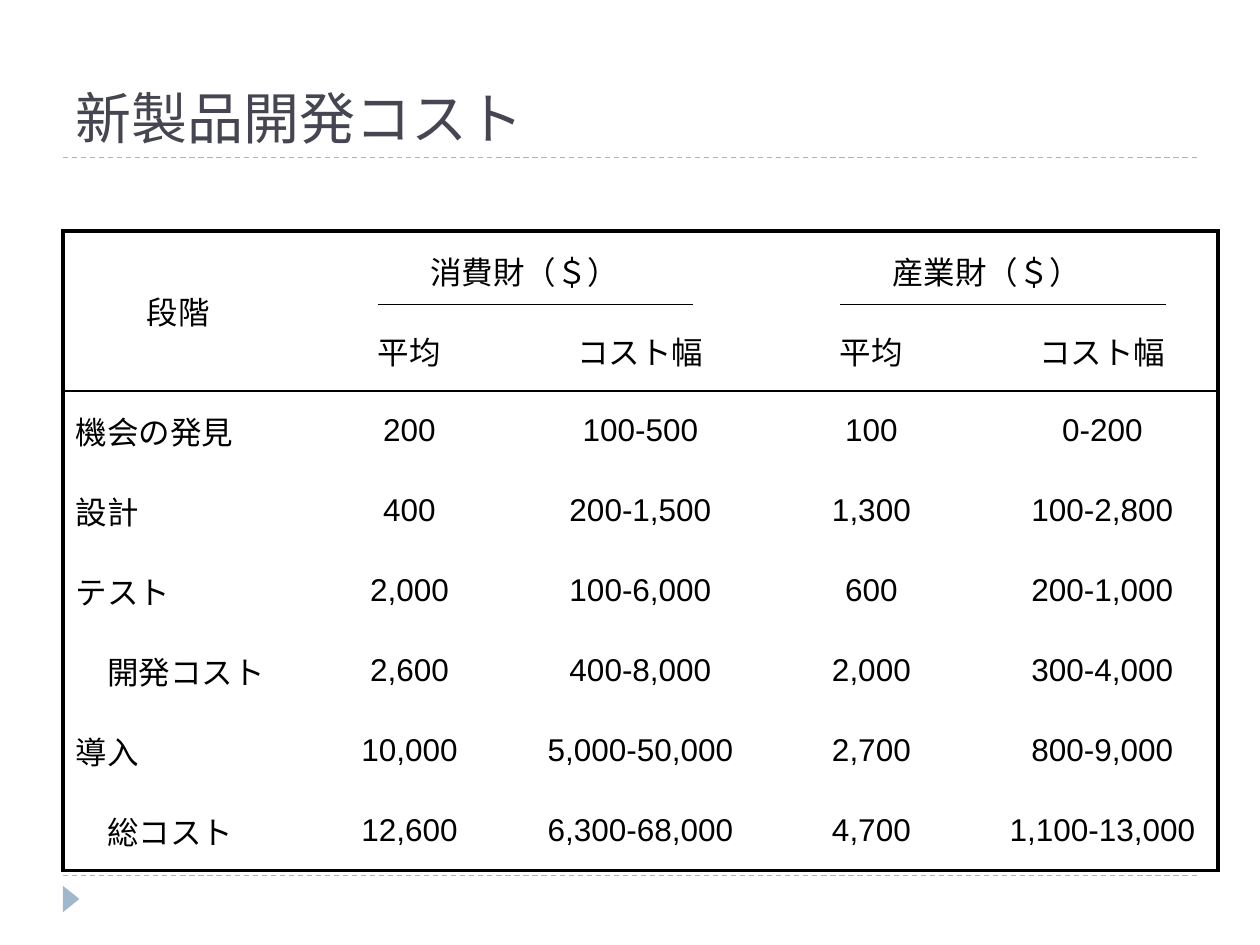
from lxml.etree import SubElement
from pptx import Presentation
from pptx.dml.color import RGBColor
from pptx.enum.dml import MSO_LINE_DASH_STYLE as Dash
from pptx.enum.shapes import MSO_CONNECTOR as Connector, MSO_SHAPE as Shape
from pptx.enum.text import MSO_ANCHOR as Anchor, PP_ALIGN as Align
from pptx.oxml.ns import qn
from pptx.util import Pt

COLORS = {"title": "464653", "accent": "9FB8CD", "ink": "000000"}
THICK, THIN = 2.25, 1

COLUMN_WIDTH, ROW_HEIGHT = 132, 45.7
CELL_MARGIN, INDENT = 7.2, 18
HEADERS = [
    ["段階", "消費財（＄）", "", "産業財（＄）", ""],
    ["", "平均", "コスト幅", "平均", "コスト幅"],
]
STAGES = [
    ["機会の発見", "200", "100-500", "100", "0-200"],
    ["設計", "400", "200-1,500", "1,300", "100-2,800"],
    ["テスト", "2,000", "100-6,000", "600", "200-1,000"],
    ["開発コスト", "2,600", "400-8,000", "2,000", "300-4,000"],
    ["導入", "10,000", "5,000-50,000", "2,700", "800-9,000"],
    ["総コスト", "12,600", "6,300-68,000", "4,700", "1,100-13,000"],
]
SUBTOTALS = {"開発コスト", "総コスト"}
MERGES = [(0, 0, 1, 0), (0, 1, 0, 2), (0, 3, 0, 4)]


class Page:
    def __init__(self, deck):
        self.page = deck.slides.add_slide(deck.slide_layouts[5])
        self.shapes = self.page.shapes

    def color(self, name):
        return RGBColor.from_string(COLORS[name])

    def add_span(self, para, text, size, font, color):
        span = para.add_run()
        span.text = text
        span.font.size = Pt(size)
        span.font.name = font
        span.font.color.rgb = self.color(color)

    def title(self, text, left, top, width, height):
        box = self.shapes.title
        box.left, box.top, box.width, box.height = map(Pt, (left, top, width, height))
        box.text_frame.vertical_anchor = Anchor.BOTTOM
        para = box.text_frame.paragraphs[0]
        para.alignment = Align.LEFT
        self.add_span(para, text, 32, "Roboto Slab", "title")

    def rule(self, left, right, y, color, dash=None):
        line = self.shapes.add_connector(Connector.STRAIGHT, Pt(left), Pt(y), Pt(right), Pt(y))
        line.line.color.rgb = self.color(color)
        line.line.width = Pt(0.75)
        if dash:
            line.line.dash_style = dash
        SubElement(line._element.spPr, qn("a:effectLst"))

    def marker(self, left, top, width, height):
        triangle = self.shapes.add_shape(
            Shape.ISOSCELES_TRIANGLE, Pt(left), Pt(top), Pt(width), Pt(height))
        triangle.rotation = 90
        triangle.shadow.inherit = False
        triangle.fill.solid()
        triangle.fill.fore_color.rgb = self.color("accent")
        triangle.line.fill.background()

    def borders(self, cell, widths):
        properties = cell._tc.get_or_add_tcPr()
        for side, width in zip("LRTB", widths):
            edge = SubElement(properties, qn(f"a:ln{side}"), w=str(Pt(width)))
            if width:
                fill = SubElement(edge, qn("a:solidFill"))
                SubElement(fill, qn("a:srgbClr"), val=COLORS["ink"])
            else:
                SubElement(edge, qn("a:noFill"))

    def table(self, rows, header_count, merges, left, top):
        row_count, column_count = len(rows), len(rows[0])
        table = self.shapes.add_table(
            row_count, column_count, Pt(left), Pt(top),
            Pt(COLUMN_WIDTH * column_count), Pt(ROW_HEIGHT * row_count)).table
        table.first_row = table.horz_banding = False
        for column in table.columns:
            column.width = Pt(COLUMN_WIDTH)
        for row in table.rows:
            row.height = Pt(ROW_HEIGHT)
        for first_row, first_column, last_row, last_column in merges:
            table.cell(first_row, first_column).merge(table.cell(last_row, last_column))

        # Thick frame, thin line under the header, nothing inside
        levels = {0: THICK, header_count: THIN, row_count: THICK}
        for r, values in enumerate(rows):
            for c, text in enumerate(values):
                cell = table.cell(r, c)
                bottom = r + (cell.span_height if cell.is_merge_origin else 1)
                right = c + (cell.span_width if cell.is_merge_origin else 1)
                self.borders(cell, (
                    THICK if c == 0 else 0,
                    THICK if right == column_count else 0,
                    levels.get(r, 0),
                    levels.get(bottom, 0)))
                cell.fill.background()
                if not text:
                    continue
                cell.vertical_anchor = Anchor.MIDDLE
                cell.margin_left = Pt(CELL_MARGIN + (INDENT if text in SUBTOTALS else 0))
                para = cell.text_frame.paragraphs[0]
                is_label = c == 0 and r >= header_count
                para.alignment = Align.LEFT if is_label else Align.CENTER
                para.space_before = Pt(3.6)
                self.add_span(para, text, 18, "Arial", "ink")


def main():
    deck = Presentation()
    deck.slide_width, deck.slide_height = Pt(720), Pt(540)
    page = Page(deck)

    # Frame of the page
    for y in (500.4, 90):
        page.rule(36, 684, y, "accent", Dash.DASH)
    page.marker(33.1, 509, 15.1, 9.4)
    page.title("新製品開発コスト", 36, 12.2, 648, 77.8)

    # Cost table and the rules under its group headings
    page.table(HEADERS + STAGES, len(HEADERS), MERGES, 36, 132)
    for left, right in ((216, 396), (480, 666)):
        page.rule(left, right, 174, "ink")

    deck.save("out.pptx")


if __name__ == "__main__":
    main()
